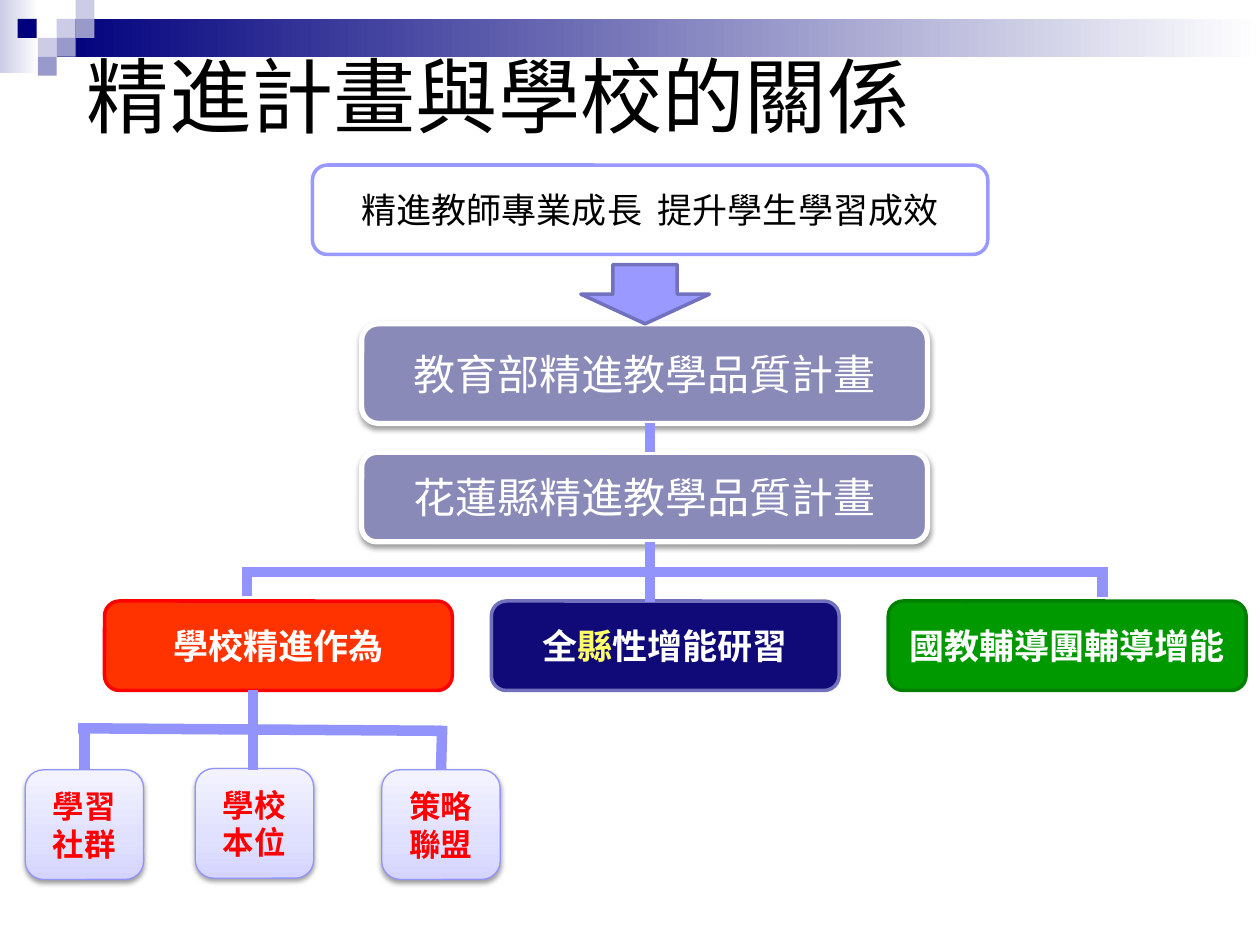
from copy import deepcopy
from lxml.etree import SubElement
from pptx import Presentation
from pptx.dml.color import RGBColor
from pptx.enum.shapes import MSO_CONNECTOR, MSO_SHAPE
from pptx.enum.text import MSO_ANCHOR, MSO_AUTO_SIZE, PP_ALIGN
from pptx.oxml.ns import qn
from pptx.util import Inches, Pt

COLORS = {
    "white": "FFFFFF", "black": "000000", "navy": "00007D", "pale": "CCCCE6",
    "lilac": "9999CC", "slate": "8A8AB9", "violet": "9999FF", "edge": "7171BD",
    "link": "9393FC", "green": "009900", "forest": "008000", "indigo": "0F0A78",
    "orange": "FF3300", "red": "FF0000", "yellow": "FFFF66",
    "mist": "D4D4FF", "haze": "E0E0FF", "frost": "F3F3FF",
}
TITLE = "精進計畫與學校的關係"
TITLE_FONT, BODY_FONT = "Noto Sans CJK JP", "Noto Sans CJK SC"

BANDS = [((0, 0, 0.31, 0.58), "pale"), ((0.45, 0.15, 9.55, 0.3), "navy")]
TILE = 0.15
TILES = [(0.45, 0.15, "pale"), (0.6, 0, "pale"), (0.6, 0.15, "lilac"), (0.3, 0.3, "pale"),
         (0.14, 0.15, "navy"), (0.45, 0.3, "lilac"), (0.3, 0.45, "lilac")]

GOAL = ((2.48, 1.31, 5.36, 0.71), "精進教師專業成長  提升學生學習成效")
ARROW = (4.61, 2.1, 1.02, 0.47)
PLANS = [(2.57, 0.79, "教育部精進教學品質計畫"), (3.59, 0.71, "花蓮縣精進教學品質計畫")]
BRANCHES = [
    (0.83, 2.76, "orange", "red", [("學校精進作為", "white")]),
    (3.9, 2.76, "indigo", "edge", [("全", "white"), ("縣", "yellow"), ("性增能研習", "white")]),
    (7.05, 2.84, "green", "forest", [("國教輔導團輔導增能", "white")]),
]
ACTIONS = [(0.2, 6.11, "學習社群"), (1.55, 6.1, "學校本位"), (3.03, 6.11, "策略聯盟")]
LINKS = [
    (5.16, 3.36, 5.16, 3.59), (5.16, 4.3, 5.16, 4.78), (1.93, 4.54, 8.78, 4.54),
    (8.75, 4.5, 8.75, 4.74), (1.96, 4.5, 1.96, 4.73), (0.62, 5.78, 3.5, 5.8),
    (0.67, 5.8, 0.67, 6.11), (2.01, 5.48, 2.01, 6.11), (3.51, 5.76, 3.5, 6.11),
]


def color(name):
    return RGBColor.from_string(COLORS[name])


def write(shape, spans, size, font=BODY_FONT, bold=False, align=PP_ALIGN.CENTER):
    frame = shape.text_frame
    frame.word_wrap = True
    frame.auto_size = MSO_AUTO_SIZE.NONE
    frame.vertical_anchor = MSO_ANCHOR.MIDDLE
    para = frame.paragraphs[0]
    para.alignment = align
    for text, ink in spans:
        span = para.add_run()
        span.text = text
        span.font.size = Pt(size)
        span.font.bold = bold
        span.font.name = font
        span.font.color.rgb = color(ink)
        SubElement(span._r.get_or_add_rPr(), qn("a:ea"), typeface=font)


def add_gradient(fill, stops, angle):
    fill.gradient()
    fill.gradient_angle = angle
    stop_list = fill.gradient_stops[0]._gs.getparent()
    while len(stop_list) < len(stops):
        stop_list.append(deepcopy(stop_list[-1]))
    for stop, (position, name) in zip(fill.gradient_stops, stops):
        stop.position = position
        stop.color.rgb = color(name)


def add_shadow(shape):
    effects = shape._element.spPr.find(qn("a:effectLst"))
    shadow = SubElement(effects, qn("a:outerShdw"), blurRad=str(Pt(3.1)), dist=str(Pt(1.6)),
                        dir="5400000", rotWithShape="0")
    tint = SubElement(shadow, qn("a:srgbClr"), val=COLORS["black"])
    SubElement(tint, qn("a:alpha"), val="38000")


def add_box(page, place, fill, kind=MSO_SHAPE.ROUNDED_RECTANGLE, angle=0, edge=None,
            width=2, shadow=False):
    box = page.shapes.add_shape(kind, *map(Inches, place))
    box.shadow.inherit = False
    if isinstance(fill, list):
        add_gradient(box.fill, fill, angle)
    else:
        box.fill.solid()
        box.fill.fore_color.rgb = color(fill)
    if edge:
        box.line.color.rgb = color(edge)
        box.line.width = Pt(width)
    else:
        box.line.fill.background()
    if shadow:
        add_shadow(box)
    return box


def add_link(page, ends):
    link = page.shapes.add_connector(MSO_CONNECTOR.STRAIGHT, *map(Inches, ends))
    link.line.color.rgb = color("link")
    link.line.width = Pt(6)
    SubElement(link._element.spPr, qn("a:effectLst"))


def main():
    """Build the slide on how the improvement plan relates to schools."""
    deck = Presentation()
    deck.slide_width, deck.slide_height = Inches(10), Inches(7.5)
    page = deck.slides.add_slide(deck.slide_layouts[5])

    for place, start in BANDS:
        add_box(page, place, [(0, start), (1, "white")], kind=MSO_SHAPE.RECTANGLE)
    for left, top, fill in TILES:
        add_box(page, (left, top, TILE, TILE), fill, kind=MSO_SHAPE.RECTANGLE)

    title = page.shapes.title
    title.left, title.top, title.width, title.height = map(Inches, (0.59, 0, 9, 1.5))
    write(title, [(TITLE, "black")], 47, font=TITLE_FONT, align=PP_ALIGN.LEFT)
    page.shapes.element.append(title.element)

    for top, height, text in PLANS:
        plan = add_box(page, (2.87, top, 4.49, height), "slate", edge="white", width=3, shadow=True)
        write(plan, [(text, "white")], 24)
    place, text = GOAL
    write(add_box(page, place, "white", edge="violet"), [(text, "black")], 20)
    for left, width, fill, edge, spans in BRANCHES:
        branch = add_box(page, (left, 4.77, width, 0.71), fill, edge=edge)
        write(branch, spans, 20, bold=True)
    for left, top, text in ACTIONS:
        action = add_box(page, (left, top, 0.94, 0.87),
                         [(0, "mist"), (0.35, "haze"), (1, "frost")],
                         angle=90, edge="link", width=0.75, shadow=True)
        write(action, [(text, "red")], 18, bold=True)
    add_box(page, ARROW, "violet", kind=MSO_SHAPE.DOWN_ARROW, edge="edge")
    for ends in LINKS:
        add_link(page, ends)
    deck.save("out.pptx")


if __name__ == "__main__":
    main()
